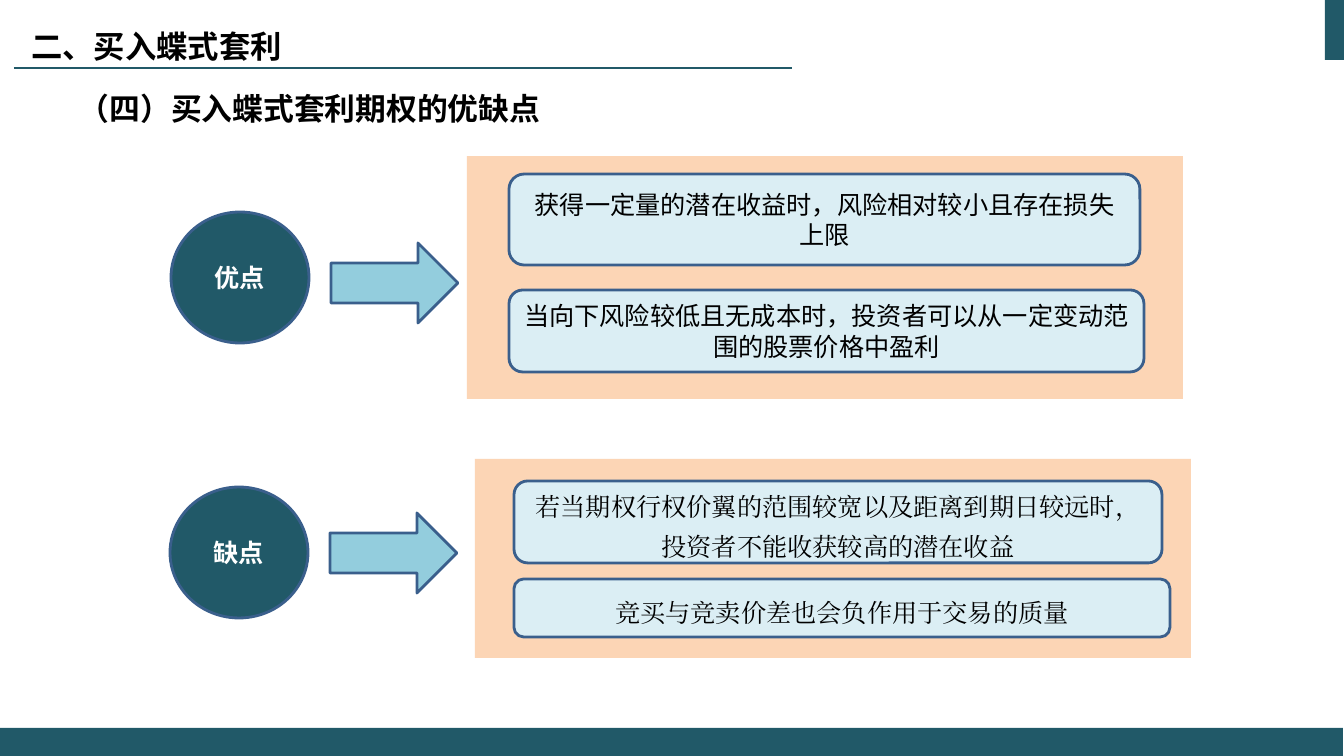
import pptx
import pptx.dml.color
import pptx.enum.shapes
import pptx.enum.text
import pptx.oxml.ns
import pptx.util
from lxml import etree

RGBColor = pptx.dml.color.RGBColor
SHAPE = pptx.enum.shapes.MSO_SHAPE
ALIGN = pptx.enum.text.PP_ALIGN

TEAL = RGBColor(0x21, 0x59, 0x68)
PEACH = RGBColor(0xFC, 0xD5, 0xB5)
PALE_BLUE = RGBColor(0xDB, 0xEE, 0xF4)
SKY = RGBColor(0x93, 0xCD, 0xDD)
OUTLINE = RGBColor(0x3A, 0x5F, 0x8C)
BLACK = RGBColor(0, 0, 0)
WHITE = RGBColor(255, 255, 255)
EMU_PER_PX = 914400 / 100.8


def px(*lengths):
    """Turn pixel lengths into EMU."""
    return [pptx.util.Emu(round(length * EMU_PER_PX)) for length in lengths]


def write(shape, text, size, font, color, bold=False, align=ALIGN.LEFT, spacing=None):
    """Fill a shape with one vertically centred paragraph and return its run."""
    frame = shape.text_frame
    frame.word_wrap = True
    frame.vertical_anchor = pptx.enum.text.MSO_ANCHOR.MIDDLE
    para = frame.paragraphs[0]
    para.alignment = align
    para.line_spacing = spacing
    span = para.add_run()
    span.text = text
    span.font.size = pptx.util.Pt(size)
    span.font.name = font
    span.font.bold = bold
    span.font.color.rgb = color
    east_asian = etree.SubElement(span._r.get_or_add_rPr(), pptx.oxml.ns.qn("a:ea"))
    east_asian.set("typeface", font)
    return span


deck = pptx.Presentation()
deck.slide_width, deck.slide_height = px(1344, 756)
page = deck.slides.add_slide(deck.slide_layouts[5])

# Frame of the page
for bar in ((1325, 0, 20, 60), (0, 728, 1343, 28)):
    block = page.shapes.add_shape(SHAPE.RECTANGLE, *px(*bar))
    block.shadow.inherit = False
    block.fill.solid()
    block.fill.fore_color.rgb = TEAL
    block.line.fill.background()

rule = page.shapes.add_connector(
    pptx.enum.shapes.MSO_CONNECTOR.STRAIGHT, *px(14, 68, 792, 68))
rule.line.color.rgb = TEAL
rule.line.width = pptx.util.Pt(1.5)
etree.SubElement(rule._element.spPr, pptx.oxml.ns.qn("a:effectLst"))

# Headings
title = page.shapes.title
title.left, title.top, title.width, title.height = px(21, -4, 1097, 94)
heading = write(title, "二、买入蝶式套利", 28, "Noto Sans CJK SC", BLACK, bold=True)
heading._r.get_or_add_rPr().set("cap", "small")

subtitle = page.shapes.add_textbox(*px(69, 77, 1223, 60))
write(subtitle, "（四）买入蝶式套利期权的优缺点", 22, "Calibri", BLACK,
      bold=True, spacing=pptx.util.Pt(28.4))

# Each group: label, circle, arrow, panel, font, line spacing, cards
groups = [
    ("优点", (171, 212), (331, 243), (467, 156, 716, 243), "Calibri", None, [
        ((509, 174, 631, 91), "获得一定量的潜在收益时，风险相对较小且存在损失上限"),
        ((509, 290, 635, 82), "当向下风险较低且无成本时，投资者可以从一定变动范围的股票价格中盈利"),
    ]),
    ("缺点", (170, 487), (330, 513), (475, 459, 716, 199), "Times New Roman", 1.3, [
        ((514, 481, 648, 82), "若当期权行权价翼的范围较宽以及距离到期日较远时，投资者不能收获较高的潜在收益"),
        ((514, 579, 656, 58), "竞买与竞卖价差也会负作用于交易的质量"),
    ]),
]
for label, circle, arrow, panel, font, spacing, cards in groups:
    pieces = [
        (SHAPE.RECTANGLE, panel, PEACH, None),
        (SHAPE.OVAL, (*circle, 138, 131), TEAL, label),
        (SHAPE.RIGHT_ARROW, (*arrow, 127, 80), SKY, None),
    ]
    pieces += [(SHAPE.ROUNDED_RECTANGLE, place, PALE_BLUE, text) for place, text in cards]
    for kind, place, color, text in pieces:
        shape = page.shapes.add_shape(kind, *px(*place))
        shape.shadow.inherit = False
        shape.fill.solid()
        shape.fill.fore_color.rgb = color
        if kind == SHAPE.RECTANGLE:
            shape.line.fill.background()
        else:
            shape.line.color.rgb = OUTLINE
            shape.line.width = pptx.util.Pt(2)
        if kind == SHAPE.OVAL:
            write(shape, text, 18, "Calibri", WHITE, bold=True, align=ALIGN.CENTER)
        elif text:
            write(shape, text, 18, font, BLACK, align=ALIGN.CENTER, spacing=spacing)

deck.save("out.pptx")
